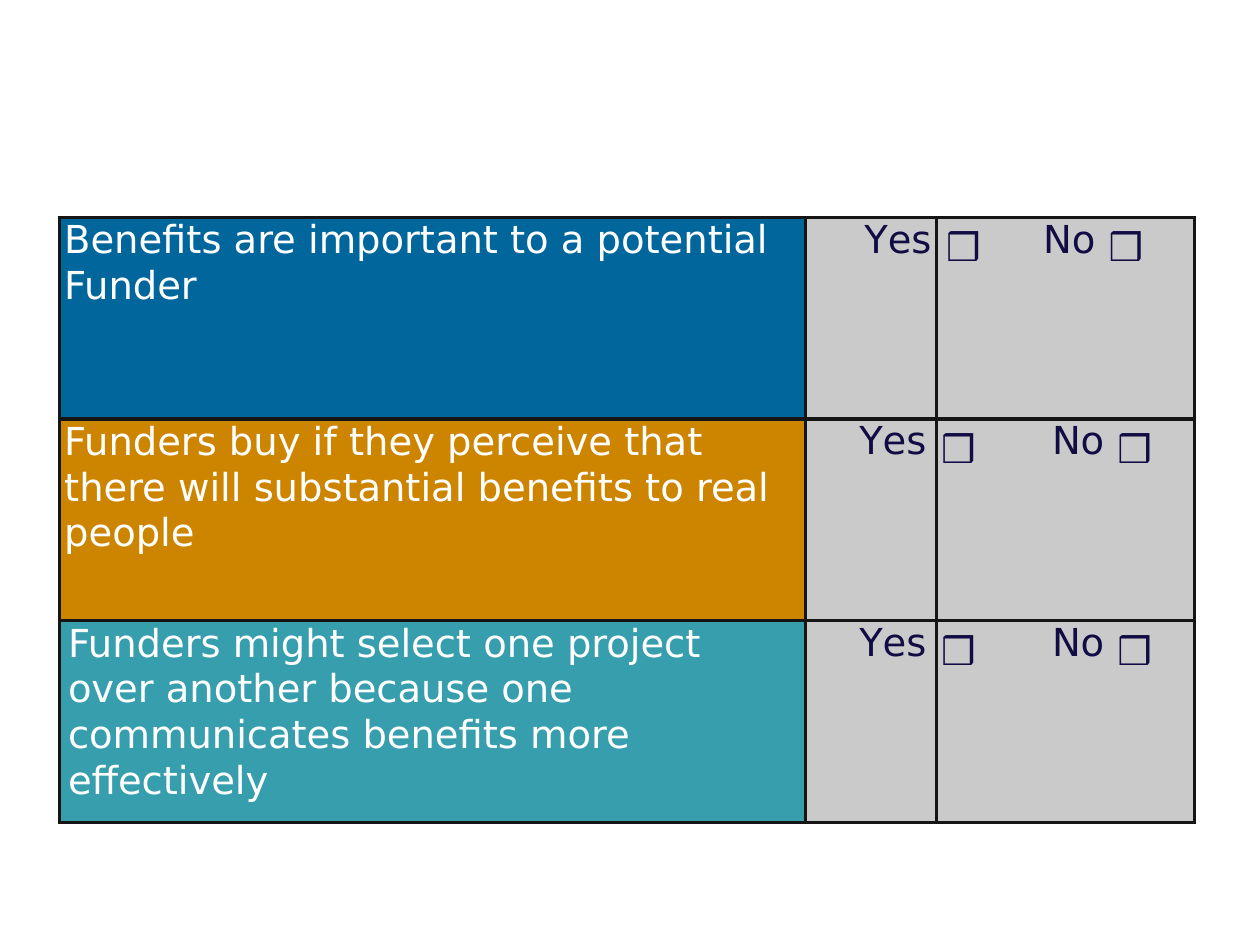
import lxml.etree
import pptx
import pptx.dml.color
import pptx.oxml.ns
import pptx.util

qn = pptx.oxml.ns.qn

COLORS = {"white": "FFFFFF", "navy": "110C43", "grey": "CACACA", "line": "151515",
          "blue": "00669C", "ochre": "CD8500", "teal": "379EAD"}
TEXT_FONT, BOX_FONT = "DejaVu Sans", "Noto Sans CJK JP"
COLUMNS = [5.92, 1.04, 0.62, 0.73, 0.7]
ROW_HEIGHT = 1.6
# Borders of each column; the box and No columns share one open frame.
BORDERS = ["LRTB", "LRTB", "LTB", "TB", "RTB"]

# Paragraphs, fill, and the left inset of each column
STATEMENTS = [
    (["Benefits are important to a potential", "Funder"], "blue",
     [0.04, 0.47, 0.08, 0.23, 0.02]),
    (["Funders buy if they perceive that there will substantial benefits to real people"],
     "ochre", [0.04, 0.43, 0.04, 0.3, 0.09]),
    (["Funders might select one project over another because one communicates "
      "benefits more effectively"], "teal", [0.07, 0.43, 0.04, 0.3, 0.09]),
]


def rgb(name):
    return pptx.dml.color.RGBColor.from_string(COLORS[name])


class Deck:
    def __init__(self, width, height):
        self.prs = pptx.Presentation()
        self.prs.slide_width = pptx.util.Inches(width)
        self.prs.slide_height = pptx.util.Inches(height)
        self.s = self.prs.slides.add_slide(self.prs.slide_layouts[6])
        self.size = pptx.util.Pt(22)
        self.line = pptx.util.Pt(2)

    def table(self, left, top, columns, rows, row_height):
        """Add a table; left and top are shares of the slide's size."""
        frame = self.s.shapes.add_table(
            rows, len(columns),
            int(self.prs.slide_width * left), int(self.prs.slide_height * top),
            pptx.util.Inches(sum(columns)), pptx.util.Inches(rows * row_height))
        table = frame.table
        table.first_row = table.horz_banding = False
        for column, width in zip(table.columns, columns):
            column.width = pptx.util.Inches(width)
        for row in table.rows:
            row.height = pptx.util.Inches(row_height)
        return table

    def cell(self, cell, paragraphs, fill, color, borders, inset, font=TEXT_FONT,
             right=0, spacing=None):
        cell.margin_top = cell.margin_bottom = 0
        cell.margin_left = pptx.util.Inches(inset)
        cell.margin_right = pptx.util.Inches(right)
        self.borders(cell, borders)
        cell.fill.solid()
        cell.fill.fore_color.rgb = rgb(fill)
        tf = cell.text_frame
        for i, text in enumerate(paragraphs):
            p = tf.add_paragraph() if i else tf.paragraphs[0]
            p.line_spacing = spacing
            p.font.size = self.size
            p.font.name = font
            p.font.color.rgb = rgb(color)
            props = p._p.pPr.find(qn("a:defRPr"))
            for tag in ("a:ea", "a:sym"):
                lxml.etree.SubElement(props, qn(tag), typeface=font)
            p.add_run().text = text

    def borders(self, cell, sides):
        """Draw the named sides of a cell and clear the others."""
        props = cell._tc.get_or_add_tcPr()
        for side in "LRTB":
            ln = lxml.etree.SubElement(props, qn(f"a:ln{side}"), w=str(self.line))
            if side in sides:
                solid = lxml.etree.SubElement(ln, qn("a:solidFill"))
                lxml.etree.SubElement(solid, qn("a:srgbClr"), val=COLORS["line"])
            else:
                lxml.etree.SubElement(ln, qn("a:noFill"))

    def kern_first(self, cell, points):
        """Tighten the space after the first letter of a cell."""
        p = cell.text_frame.paragraphs[0]
        r = p.runs[0]
        rest = r.text[1:]
        r.text = r.text[0]
        r._r.get_or_add_rPr().set("spc", str(int(points * 100)))
        p.add_run().text = rest


def main():
    deck = Deck(10, 7.5)
    table = deck.table(0.047, 0.23, COLUMNS, len(STATEMENTS), ROW_HEIGHT)
    for i, (paragraphs, fill, insets) in enumerate(STATEMENTS):
        deck.cell(table.cell(i, 0), paragraphs, fill, "white", BORDERS[0], insets[0],
                  right=0.15, spacing=1.02)
        for j, text in enumerate(["Yes", "❒", "No", "❒"], start=1):
            font = BOX_FONT if text == "❒" else TEXT_FONT
            deck.cell(table.cell(i, j), [text], "grey", "navy", BORDERS[j], insets[j], font)
        deck.kern_first(table.cell(i, 1), -1.4)
    deck.prs.save("out.pptx")


if __name__ == "__main__":
    main()
